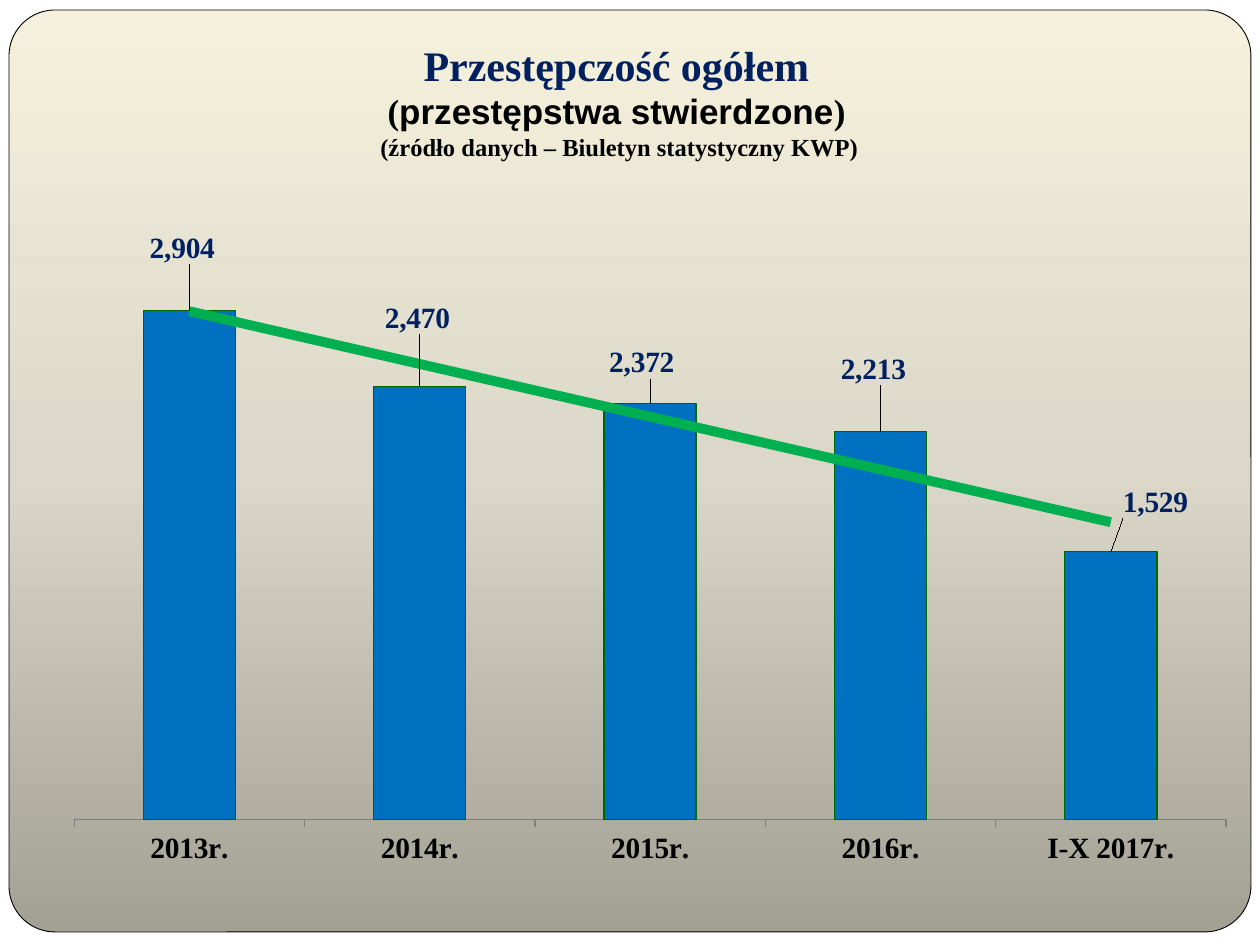
from lxml import etree
from pptx import Presentation
from pptx import util as u
from pptx.chart.data import CategoryChartData
from pptx.dml.color import RGBColor
from pptx.enum import chart as charts, shapes, text
from pptx.oxml import parse_xml
from pptx.oxml.ns import nsdecls, qn

THEME = {
    "serif": "Times New Roman", "sans": "Arial",
    "navy": "002060", "black": "000000", "white": "FFFFFF", "axis": "7F7F7F",
    "bar": "0070C0", "bar_edge": "006600", "trend": "00B050",
    "gradient": [(0, "A3A094"), (50, "DBD8C9"), (100, "F5F1DC")],
    "heading": 24, "subheading": 20, "source": 14, "chart": 25.2, "label": 16.8,
}
TITLE = [
    [("Przestępczość ogółem", "heading", "serif", "navy")],
    [("(", "subheading", "serif", "black"),
     ("przestępstwa stwierdzone", "subheading", "sans", "black"),
     (")", "subheading", "serif", "black")],
    [(" (źródło danych – Biuletyn statystyczny KWP)", "source", "serif", "black")],
]
CRIMES = [("2013r.", 2904), ("2014r.", 2470), ("2015r.", 2372),
          ("2016r.", 2213), ("I-X 2017r.", 1529)]
LABEL_SHIFTS = [(-7, -41), (-3, -47), (-8, -20), (-7, -41), (44, -28)]
NUMBER_FORMAT = "#,##0"
PAGE = (0, 0, 1260, 945)
PANEL = (9, 10, 1242, 922)
TITLE_BOX = (123, 16, 987, 158)
CHART_BOX = (32, 181, 1205, 756)
PLOT = {"x": 0.035, "y": 0.033, "w": 0.956, "h": 0.812}


def px(length):
    return u.Emu(round(length * 914400 / 126))


def frame(box):
    return [px(length) for length in box]


def colour(name):
    return RGBColor.from_string(THEME[name])


def assign(target, values):
    for name, value in values.items():
        setattr(target, name, value)


def style(font, size, face, shade, bold=True):
    assign(font, {"size": u.Pt(THEME[size]), "name": THEME[face], "bold": bold})
    font.color.rgb = colour(shade)


def add_panel(page, kind, box):
    panel = page.shapes.add_shape(kind, *frame(box))
    panel.shadow.inherit = False
    return panel


def add_background(page):
    page.background.fill.gradient()
    sheet = add_panel(page, shapes.MSO_SHAPE.RECTANGLE, PAGE)
    sheet.fill.solid()
    sheet.fill.fore_color.rgb = colour("white")
    sheet.line.fill.background()
    panel = add_panel(page, shapes.MSO_SHAPE.ROUNDED_RECTANGLE, PANEL)
    panel.adjustments[0] = 0.05
    panel.fill.gradient()
    panel.line.color.rgb = colour("black")
    panel.line.width = u.Pt(0.5)
    stops = "".join(f'<a:gs pos="{place * 1000}"><a:srgbClr val="{shade}"/></a:gs>'
                    for place, shade in THEME["gradient"])
    for gradient in list(page.element.iter(qn("a:gradFill"))):
        gradient.getparent().replace(gradient, parse_xml(
            f'<a:gradFill {nsdecls("a")} rotWithShape="1"><a:gsLst>{stops}</a:gsLst>'
            '<a:lin ang="16200000" scaled="0"/></a:gradFill>'))


def add_title(page):
    title = page.shapes.title
    page.shapes.element.append(title.element)
    assign(title, dict(zip(("left", "top", "width", "height"), frame(TITLE_BOX))))
    assign(title.text_frame, {
        "word_wrap": True, "auto_size": text.MSO_AUTO_SIZE.NONE,
        "vertical_anchor": text.MSO_ANCHOR.BOTTOM,
        "margin_left": u.Inches(0.1), "margin_right": u.Inches(0.1),
        "margin_top": u.Inches(0.05), "margin_bottom": u.Inches(0.1)})
    para = title.text_frame.paragraphs[0]
    assign(para, {"alignment": text.PP_ALIGN.CENTER, "line_spacing": 1.0,
                  "space_before": u.Pt(0)})
    for index, line in enumerate(TITLE):
        if index:
            para.add_line_break()
        for words, size, face, shade in line:
            span = para.add_run()
            span.text = words
            style(span.font, size, face, shade)


def layout(values, inner=False):
    target = '<c:layoutTarget val="inner"/>' if inner else ""
    modes = '<c:xMode val="edge"/><c:yMode val="edge"/>' if inner else ""
    sizes = "".join(f'<c:{key} val="{value}"/>' for key, value in values.items())
    return parse_xml(f'<c:layout {nsdecls("c")}><c:manualLayout>{target}{modes}{sizes}'
                     '</c:manualLayout></c:layout>')


def add_labels(plot, series):
    plot.has_data_labels = True
    outside = charts.XL_LABEL_POSITION.OUTSIDE_END
    labels = series.data_labels
    assign(labels, {"show_value": True, "number_format": NUMBER_FORMAT,
                    "number_format_is_linked": False, "position": outside})
    style(labels.font, "label", "serif", "navy")
    for index in range(len(CRIMES)):
        label = series.points[index].data_label
        label.position = outside
        style(label.font, "label", "serif", "navy")
    nodes = series.data_labels._element.findall(qn("c:dLbl"))
    for node, (across, down) in zip(nodes, LABEL_SHIFTS):
        place = node.find(qn("c:idx"))
        place.addnext(parse_xml(f'<c:numFmt {nsdecls("c")} formatCode="{NUMBER_FORMAT}" '
                                'sourceLinked="0"/>'))
        place.addnext(layout({"x": round(across / CHART_BOX[2], 3),
                              "y": round(down / CHART_BOX[3], 3)}))


def add_trend(series):
    trend = parse_xml(
        f'<c:trendline {nsdecls("c", "a")}><c:spPr><a:ln w="{u.Pt(5.6)}"><a:solidFill>'
        f'<a:srgbClr val="{THEME["trend"]}"/></a:solidFill></a:ln></c:spPr>'
        '<c:trendlineType val="linear"/><c:dispRSqr val="0"/><c:dispEq val="0"/>'
        '</c:trendline>')
    series._element.find(qn("c:cat")).addprevious(trend)


def add_crime_chart(page):
    data = CategoryChartData(number_format=NUMBER_FORMAT)
    data.categories = [period for period, count in CRIMES]
    data.add_series("Series 1", [count for period, count in CRIMES])
    chart = page.shapes.add_chart(charts.XL_CHART_TYPE.COLUMN_CLUSTERED,
                                  *frame(CHART_BOX), data).chart
    assign(chart, {"has_legend": False, "has_title": False})
    style(chart.font, "chart", "serif", "black", False)
    assign(chart.value_axis, {"minimum_scale": 0, "maximum_scale": 3500,
                              "has_major_gridlines": False, "visible": False})
    axis = chart.category_axis
    axis.major_tick_mark = charts.XL_TICK_MARK.OUTSIDE
    axis.format.line.color.rgb = colour("axis")
    style(axis.tick_labels.font, "label", "serif", "black")
    plot = chart.plots[0]
    assign(plot, {"gap_width": 150, "vary_by_categories": False})
    series = plot.series[0]
    series.format.fill.solid()
    series.format.fill.fore_color.rgb = colour("bar")
    series.format.line.color.rgb = colour("bar_edge")
    series.format.line.width = u.Pt(0.75)
    add_labels(plot, series)
    add_trend(series)
    area = chart._chartSpace.find(".//" + qn("c:plotArea"))
    for old in area.findall(qn("c:layout")):
        area.remove(old)
    area.insert(0, layout(PLOT, inner=True))


def main():
    deck = Presentation()
    assign(deck, {"slide_width": px(PAGE[2]), "slide_height": px(PAGE[3])})
    page = deck.slides.add_slide(deck.slide_layouts[5])
    add_background(page)
    add_title(page)
    add_crime_chart(page)
    deck.save("out.pptx")


if __name__ == "__main__":
    main()
